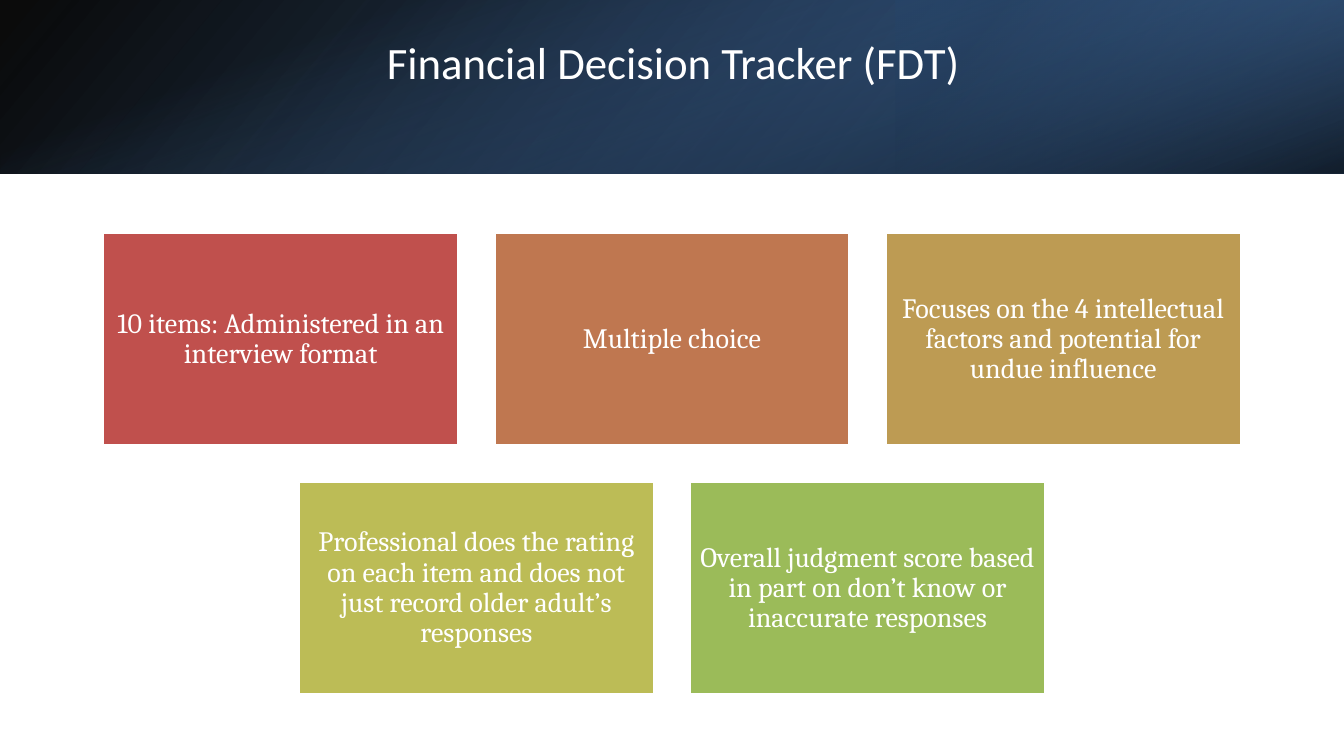
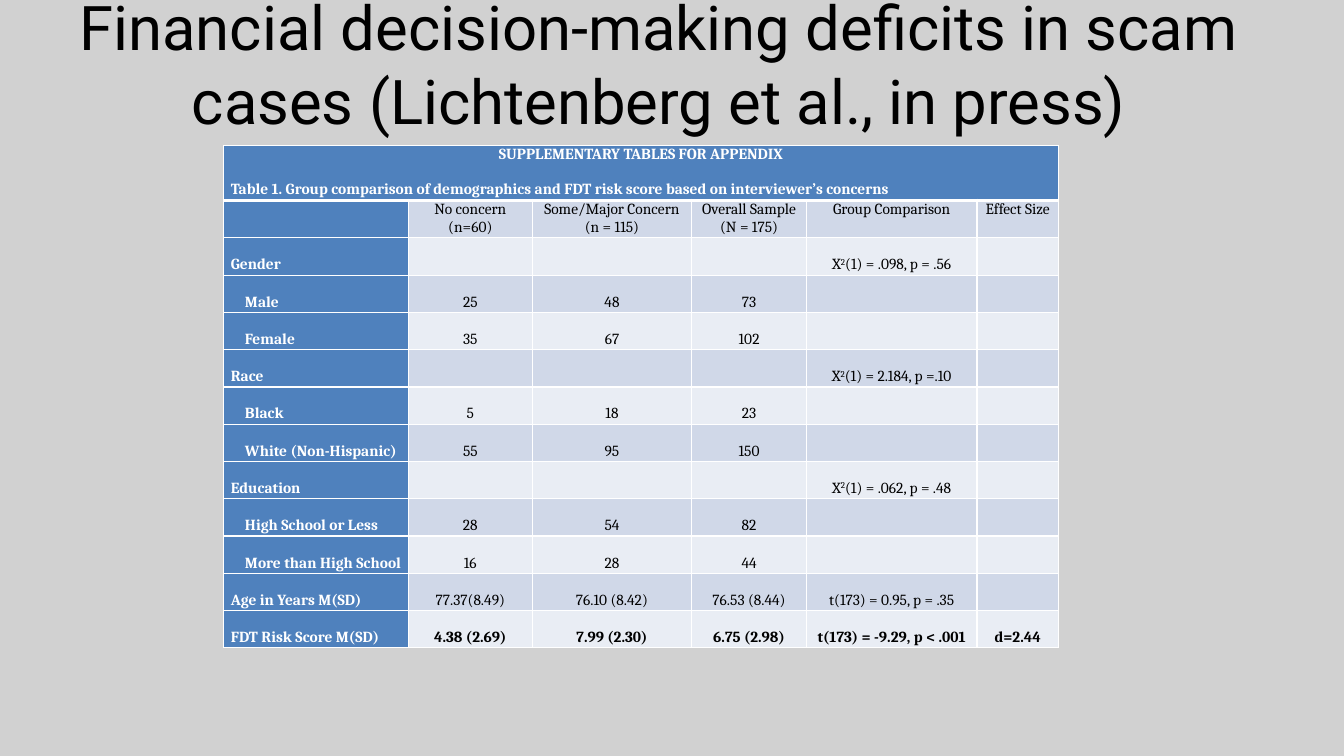
from lxml.etree import SubElement
from pptx import Presentation
from pptx.dml.color import RGBColor
from pptx.enum.shapes import MSO_SHAPE
from pptx.enum.text import MSO_ANCHOR, MSO_AUTO_SIZE, PP_ALIGN
from pptx.oxml.ns import qn
from pptx.util import Inches, Pt

# Shared measures, colours and fonts
WIDTH, HEIGHT = 13.33, 7.5
BAND_HEIGHT = 1.72
TITLE_ONLY = 5
WHITE, BLACK, BLUE = "FFFFFF", "000000", "4F81BD"
PAGE_GREY = "D1D1D1"
STRIPES = ("E9EDF4", "D0D8E8")
BODY_FONT = "Cambria"

# Box grid: one list per row, each row centred on the slide
BOX_WIDTH, BOX_HEIGHT, BOX_GAP, BOX_TOP = 3.52, 2.11, 0.36, 2.31
BOX_ROWS = [
    [("10 items: Administered in an interview format", "C0504D"),
     ("Multiple choice", "BF7750"),
     ("Focuses on the 4 intellectual factors and potential for undue influence", "BD9B53")],
    [("Professional does the rating on each item and does not just record older adult’s responses",
      "BCBC56"),
     ("Overall judgment score based in part on don’t know or inaccurate responses", "9BBB59")],
]

# Table content: label, indented?, then the five value columns
COLUMN_WIDTHS = [1.83, 1.23, 1.58, 1.14, 1.69, 0.81]
TITLE_ROW_HEIGHT, ROW_HEIGHT, LINE_HEIGHT = 0.55, 0.37, 0.18
LABEL_INDENT = 0.14
TABLE_TITLES = ["SUPPLEMENTARY TABLES FOR APPENDIX",
                "Table 1. Group comparison of demographics and FDT risk score "
                "based on interviewer’s concerns"]
COLUMN_HEADS = ["No concern (n=60)", "Some/Major Concern (n = 115)",
                "Overall Sample (N = 175)", "Group Comparison", "Effect Size"]
TABLE_ROWS = [
    ("Gender", False, "", "", "", "X²(1) = .098, p = .56", ""),
    ("Male", True, "25", "48", "73", "", ""),
    ("Female", True, "35", "67", "102", "", ""),
    ("Race", False, "", "", "", "X²(1) = 2.184, p =.10", ""),
    ("Black", True, "5", "18", "23", "", ""),
    ("White (Non-Hispanic)", True, "55", "95", "150", "", ""),
    ("Education", False, "", "", "", "X²(1) = .062, p = .48", ""),
    ("High School or Less", True, "28", "54", "82", "", ""),
    ("More than High School", True, "16", "28", "44", "", ""),
    ("Age in Years M(SD)", False, "77.37(8.49)", "76.10 (8.42)", "76.53 (8.44)",
     "t(173) = 0.95, p = .35", ""),
    ("FDT Risk Score M(SD)", False, "4.38 (2.69)", "7.99 (2.30)", "6.75 (2.98)",
     "t(173) = -9.29, p < .001", "d=2.44"),
]


def colour(value):
    return RGBColor.from_string(value)


def style(para, font, size, value, bold=False, align=PP_ALIGN.CENTER):
    para.alignment = align
    para.font.name = font
    para.font.size = Pt(size)
    para.font.bold = bold
    para.font.color.rgb = colour(value)


def add_page(deck, background):
    page = deck.slides.add_slide(deck.slide_layouts[TITLE_ONLY])
    page.background.fill.solid()
    page.background.fill.fore_color.rgb = colour(background)
    return page


def set_title(page, text, place, font, size, value):
    title = page.shapes.title
    title.left, title.top, title.width, title.height = map(Inches, place)
    frame = title.text_frame
    frame.text = text
    frame.word_wrap = True
    frame.auto_size = MSO_AUTO_SIZE.NONE
    frame.vertical_anchor = MSO_ANCHOR.MIDDLE
    style(frame.paragraphs[0], font, size, value)
    # Bring the title in front of everything drawn so far
    title.element.getparent().append(title.element)


def add_rectangle(page, left, top, width, height):
    box = page.shapes.add_shape(MSO_SHAPE.RECTANGLE, *map(Inches, (left, top, width, height)))
    box.shadow.inherit = False
    return box


def add_gradient(page, place, stops, angle, rotation=0, flip=False):
    """Rectangle with a linear gradient; stops are (position, colour, opacity) in percent."""
    box = add_rectangle(page, *place)
    box.line.fill.background()
    box.rotation = rotation
    if flip:
        box.element.spPr.find(qn("a:xfrm")).set("flipH", "1")
    box.fill.gradient()
    gradient = box.element.spPr.find(qn("a:gradFill"))
    gradient.set("rotWithShape", "1")
    for child in list(gradient):
        gradient.remove(child)
    stop_list = SubElement(gradient, qn("a:gsLst"))
    for position, value, opacity in stops:
        stop = SubElement(stop_list, qn("a:gs"), pos=str(position * 1000))
        tint = SubElement(stop, qn("a:srgbClr"), val=value)
        SubElement(tint, qn("a:alpha"), val=str(opacity * 1000))
    SubElement(gradient, qn("a:lin"), ang=str(angle * 60000), scaled="0")


def add_header_band(page):
    add_gradient(page, (0, 0, WIDTH, BAND_HEIGHT),
                 [(0, BLACK, 96), (100, "376092", 100)], 140, flip=True)
    add_gradient(page, (WIDTH * 2 / 3, 0, WIDTH / 3, BAND_HEIGHT),
                 [(19, "254061", 68), (100, BLUE, 79)], 320, rotation=180, flip=True)
    # Drawn upright, then turned to lie over the band
    offset = (WIDTH - BAND_HEIGHT) / 2
    add_gradient(page, (offset, -offset, BAND_HEIGHT, WIDTH),
                 [(23, BLUE, 0), (99, BLACK, 74)], 340, rotation=90)


def add_text_box(page, left, top, text, value):
    box = add_rectangle(page, left, top, BOX_WIDTH, BOX_HEIGHT)
    box.fill.solid()
    box.fill.fore_color.rgb = colour(value)
    box.line.color.rgb = colour(WHITE)
    box.line.width = Pt(1.5)
    frame = box.text_frame
    frame.word_wrap = True
    frame.vertical_anchor = MSO_ANCHOR.MIDDLE
    frame.margin_left = frame.margin_right = Inches(0.08)
    frame.margin_top = frame.margin_bottom = Inches(0.08)
    frame.text = text
    para = frame.paragraphs[0]
    para.line_spacing = 0.9
    style(para, BODY_FONT, 20, WHITE)


def add_box_grid(page):
    for row, boxes in enumerate(BOX_ROWS):
        row_width = len(boxes) * (BOX_WIDTH + BOX_GAP) - BOX_GAP
        top = BOX_TOP + row * (BOX_HEIGHT + BOX_GAP)
        for column, (text, value) in enumerate(boxes):
            left = (WIDTH - row_width) / 2 + column * (BOX_WIDTH + BOX_GAP)
            add_text_box(page, left, top, text, value)


def format_cell(cell, fill, top_margin=0.0, bottom_line=1):
    cell.margin_left = cell.margin_right = Inches(0.07)
    cell.margin_top, cell.margin_bottom = Inches(top_margin), 0
    properties = cell._tc.get_or_add_tcPr()
    for side, width in (("L", 1), ("R", 1), ("T", 1), ("B", bottom_line)):
        line = SubElement(properties, qn(f"a:ln{side}"), w=str(Pt(width)))
        SubElement(SubElement(line, qn("a:solidFill")), qn("a:srgbClr"), val=WHITE)
    cell.fill.solid()
    cell.fill.fore_color.rgb = colour(fill)


def write_value(para, text, bold=False):
    """Centred value, with the square of a chi-square raised."""
    before, square, after = text.partition("²")
    para.add_run().text = before
    if square:
        span = para.add_run()
        span.text = "2"
        span.font._element.set("baseline", "30000")
        para.add_run().text = after
    style(para, BODY_FONT, 11, BLACK, bold)


def write_label(para, text, indented):
    if indented:
        para._p.get_or_add_pPr().set("indent", str(Inches(LABEL_INDENT)))
    para.text = text
    style(para, BODY_FONT, 11, WHITE, True, PP_ALIGN.LEFT)


def add_comparison_table(page, left, top):
    row_count = len(TABLE_ROWS) + 2
    height = TITLE_ROW_HEIGHT + ROW_HEIGHT * (row_count - 1)
    table = page.shapes.add_table(
        row_count, len(COLUMN_WIDTHS), Inches(left), Inches(top),
        Inches(sum(COLUMN_WIDTHS)), Inches(height)).table
    table.first_row = table.horz_banding = False
    for column, width in zip(table.columns, COLUMN_WIDTHS):
        column.width = Inches(width)
    for index, row in enumerate(table.rows):
        row.height = Inches(ROW_HEIGHT if index else TITLE_ROW_HEIGHT)

    # Title row across all columns
    for cell in table.rows[0].cells:
        format_cell(cell, BLUE, bottom_line=3)
    title_cell = table.cell(0, 0)
    title_cell.merge(table.cell(0, len(COLUMN_WIDTHS) - 1))
    title_cell.text = "\n".join(TABLE_TITLES)
    heading, caption = title_cell.text_frame.paragraphs
    style(heading, BODY_FONT, 11, WHITE, True)
    caption.space_before = Pt(12.5)
    style(caption, BODY_FONT, 11, WHITE, True, PP_ALIGN.LEFT)

    # Column heads
    format_cell(table.cell(1, 0), BLUE)
    for column, text in enumerate(COLUMN_HEADS, 1):
        cell = table.cell(1, column)
        format_cell(cell, STRIPES[1])
        write_value(cell.text_frame.paragraphs[0], text)

    # Body rows: the text starts one line down
    for row, (label, indented, *values) in enumerate(TABLE_ROWS, 2):
        cell = table.cell(row, 0)
        format_cell(cell, BLUE, LINE_HEIGHT)
        write_label(cell.text_frame.paragraphs[0], label, indented)
        is_last = row == row_count - 1
        for column, text in enumerate(values, 1):
            cell = table.cell(row, column)
            format_cell(cell, STRIPES[row % 2], LINE_HEIGHT if text else 0)
            if text:
                write_value(cell.text_frame.paragraphs[0], text, is_last)


def main():
    deck = Presentation()
    deck.slide_width, deck.slide_height = Inches(WIDTH), Inches(HEIGHT)

    # Tracker overview
    page = add_page(deck, WHITE)
    add_header_band(page)
    add_box_grid(page)
    set_title(page, "Financial Decision Tracker (FDT)",
              (2.07, 0.29, 9.22, 0.64), "Calibri", 32, WHITE)

    # Group comparison
    page = add_page(deck, PAGE_GREY)
    set_title(page, "Financial decision-making deficits in scam cases "
              "(Lichtenberg et al., in press)",
              (0.54, 0, 12, 1.25), "Roboto", 44, BLACK)
    add_comparison_table(page, 2.22, 1.44)

    deck.save("out.pptx")


if __name__ == "__main__":
    main()
